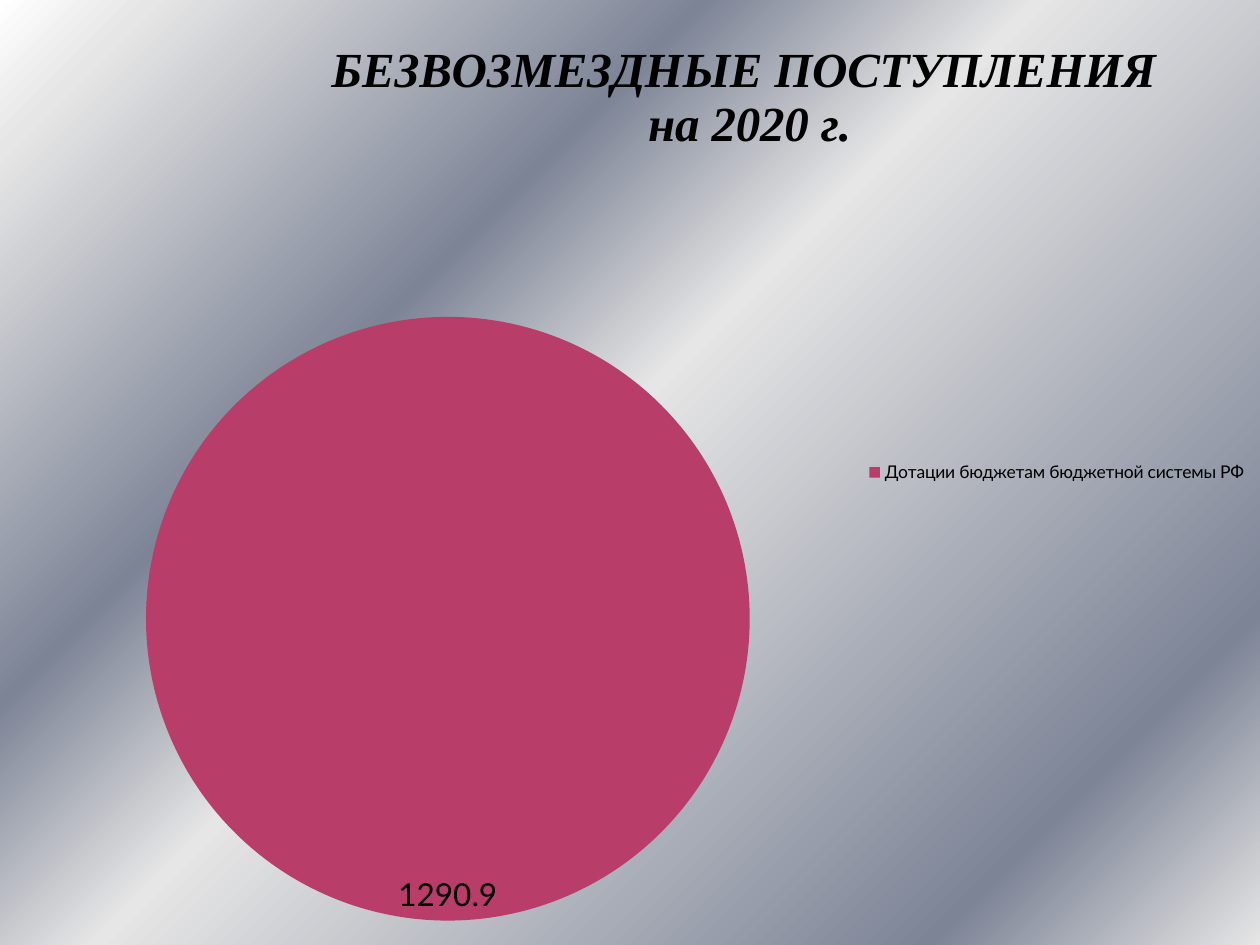
from lxml import etree
from pptx import Presentation
from pptx.chart.data import CategoryChartData
from pptx.dml.color import RGBColor
from pptx.enum.chart import XL_CHART_TYPE, XL_LABEL_POSITION, XL_LEGEND_POSITION
from pptx.oxml import parse_xml
from pptx.oxml.ns import nsdecls, qn
from pptx.util import Emu, Pt

PIE = XL_CHART_TYPE.PIE
INSIDE_END = XL_LABEL_POSITION.INSIDE_END
RIGHT = XL_LEGEND_POSITION.RIGHT

EMU_PER_PX = 914400 / 126
WIDTH, HEIGHT = 1260, 945
BLACK = RGBColor(0x00, 0x00, 0x00)
WHITE = RGBColor(0xFF, 0xFF, 0xFF)
SILVER = RGBColor(0xE6, 0xE6, 0xE6)
STEEL = RGBColor(0x7D, 0x84, 0x96)
RASPBERRY = RGBColor(0xB8, 0x3D, 0x68)

BACKGROUND_STOPS = [(0, WHITE), (7, SILVER), (32, STEEL), (47, SILVER), (85, STEEL), (100, SILVER)]
TITLE_LINES = ["БЕЗВОЗМЕЗДНЫЕ ПОСТУПЛЕНИЯ ", "на 2020 г."]
GRANTS = {"Дотации бюджетам бюджетной системы РФ": 1290.9}


def px(length):
    return Emu(round(length * EMU_PER_PX))


class SlideBuilder:
    body_font = "Lato"
    title_font = "Times New Roman"

    def __init__(self, presentation):
        self.slide = presentation.slides.add_slide(presentation.slide_layouts[6])

    def place(self, element, index, **settings):
        for old_layout in element.findall(qn("c:layout")):
            element.remove(old_layout)
        layout = etree.Element(qn("c:layout"))
        manual = etree.SubElement(layout, qn("c:manualLayout"))
        for tag, value in settings.items():
            etree.SubElement(manual, qn(f"c:{tag}")).set("val", str(value))
        element.insert(index, layout)

    def gradient(self, chart, stops, angle):
        stop_xml = "".join(
            f'<a:gs pos="{percent * 1000}"><a:srgbClr val="{color}"/></a:gs>'
            for percent, color in stops
        )
        properties = parse_xml(
            f'<c:spPr {nsdecls("c", "a")}><a:gradFill><a:gsLst>{stop_xml}</a:gsLst>'
            f'<a:lin ang="{angle * 60000}" scaled="0"/></a:gradFill>'
            "<a:ln><a:noFill/></a:ln></c:spPr>"
        )
        chart.element.find(qn("c:chart")).addnext(properties)

    def title(self, chart, lines):
        chart.has_title = True
        frame = chart.chart_title.text_frame
        for number, line in enumerate(lines):
            paragraph = frame.add_paragraph() if number else frame.paragraphs[0]
            run = paragraph.add_run()
            run.text = line
            run.font.name = self.title_font
            run.font.size = Pt(28)
            run.font.bold = run.font.italic = True
            run.font.color.rgb = BLACK
        self.place(chart.element.find(f".//{qn('c:title')}"), 1,
                   xMode="edge", yMode="edge", x=0.26, y=0.04)

    def legend(self, chart):
        chart.has_legend = True
        chart.legend.position = RIGHT
        chart.legend.include_in_layout = False
        chart.legend.font.name = self.body_font
        chart.legend.font.size = Pt(10)
        chart.legend.font.color.rgb = BLACK

    def labels(self, plot):
        plot.has_data_labels = True
        labels = plot.data_labels
        labels.show_value = True
        labels.show_percentage = False
        labels.position = INSIDE_END
        labels.font.name = self.body_font
        labels.font.size = Pt(18)
        labels.font.color.rgb = BLACK

    def pie(self, left, top, width, height, values, title_lines):
        data = CategoryChartData()
        data.categories = list(values)
        data.add_series("Series 1", list(values.values()))
        chart = self.slide.shapes.add_chart(
            PIE, px(left), px(top), px(width), px(height), data).chart
        chart.font.name = self.body_font
        chart.font.size = Pt(18)
        chart.font.color.rgb = BLACK
        self.gradient(chart, BACKGROUND_STOPS, 45)
        self.title(chart, title_lines)
        self.legend(chart)
        plot = chart.plots[0]
        plot.vary_by_categories = True
        self.labels(plot)
        series = plot.series[0]
        slice_format = series.points[0].format
        slice_format.fill.solid()
        slice_format.fill.fore_color.rgb = RASPBERRY
        slice_format.line.fill.background()
        explosion = etree.Element(qn("c:explosion"))
        explosion.set("val", "25")
        series._element.find(qn("c:dPt")).addprevious(explosion)
        self.place(chart.element.find(f".//{qn('c:plotArea')}"), 0,
                   layoutTarget="inner", xMode="edge", yMode="edge",
                   x=0.056, y=0.154, w=0.599, h=0.842)


def main():
    presentation = Presentation()
    presentation.slide_width = px(WIDTH)
    presentation.slide_height = px(HEIGHT)
    builder = SlideBuilder(presentation)
    builder.pie(0, 0, WIDTH, HEIGHT, GRANTS, TITLE_LINES)
    presentation.save("out.pptx")


if __name__ == "__main__":
    main()
